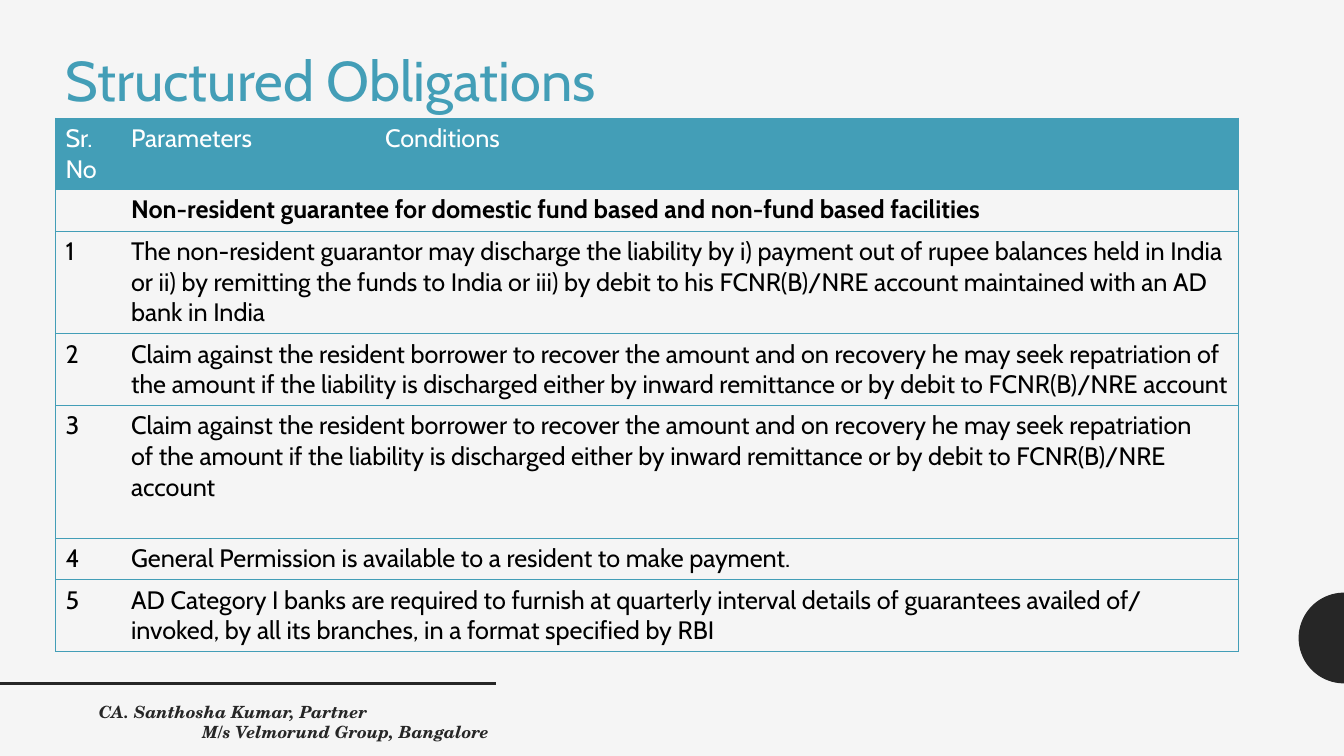
from math import cos, pi, sin

from lxml import etree
from pptx import Presentation
from pptx.dml.color import RGBColor
from pptx.enum.shapes import MSO_CONNECTOR
from pptx.enum.text import MSO_ANCHOR, MSO_AUTO_SIZE, PP_ALIGN
from pptx.oxml.ns import qn
from pptx.util import Inches, Pt

TEAL = RGBColor(0x43, 0x9E, 0xB7)
DARK = RGBColor(0x26, 0x26, 0x26)
PALE = RGBColor(0xF5, 0xF5, 0xF5)
BLACK = RGBColor(0, 0, 0)
WHITE = RGBColor(255, 255, 255)
LEFT, RIGHT = PP_ALIGN.LEFT, PP_ALIGN.RIGHT
TOP = MSO_ANCHOR.TOP
FIXED = MSO_AUTO_SIZE.NONE
STRAIGHT = MSO_CONNECTOR.STRAIGHT
SANS, SERIF = "Cabin", "TeX Gyre Schola"

CLAIM = (
    "Claim against the resident borrower to recover the amount and on recovery "
    "he may seek repatriation of the amount if the liability is discharged either "
    "by inward remittance or by debit to FCNR(B)/NRE account"
)
HEAD = ("Sr. No", "Parameters", "Conditions")
ROWS = [
    ("", "Non-resident guarantee for domestic fund based and non-fund based facilities"),
    ("1", "The non-resident guarantor may discharge the liability by i) payment out of "
          "rupee balances held in India or ii) by remitting the funds to India or iii) "
          "by debit to his FCNR(B)/NRE account maintained with an AD bank in India"),
    ("2", CLAIM),
    ("3", CLAIM),
    ("4", "General Permission is available to a resident to make payment."),
    ("5", "AD Category I banks are required to furnish at quarterly interval details of "
          "guarantees availed of/ invoked, by all its branches, in a format specified by RBI"),
]
WIDTHS = (0.65, 2.52, 8.56)
HEIGHTS = (0.71, 0.41, 1.02, 0.71, 1.32, 0.41, 0.71)


def add_run(para, text, size, color, face=SANS, bold=False, slant=False):
    run = para.add_run()
    run.text = text
    font = run.font
    font.size, font.name = Pt(size), face
    font.bold, font.italic = bold, slant
    font.color.rgb = color


def add_title(slide, x, y, w, h):
    title = slide.shapes.title
    title.left, title.top = Inches(x), Inches(y)
    title.width, title.height = Inches(w), Inches(h)
    frame = title.text_frame
    frame.auto_size = FIXED
    frame.vertical_anchor = TOP
    para = frame.paragraphs[0]
    para.alignment = LEFT
    add_run(para, "Structured Obligations", 40, TEAL)


def set_edges(cell, shown):
    props = cell._tc.get_or_add_tcPr()
    for side in "LRTB":
        line = etree.SubElement(props, qn("a:ln" + side), w=str(Pt(0.5)))
        if side in shown:
            fill = etree.SubElement(line, qn("a:solidFill"))
            etree.SubElement(fill, qn("a:srgbClr"), val=str(TEAL))
        else:
            etree.SubElement(line, qn("a:noFill"))


def add_grid(slide, x, y):
    frame = slide.shapes.add_table(
        len(HEIGHTS), len(WIDTHS), Inches(x), Inches(y),
        Inches(sum(WIDTHS)), Inches(sum(HEIGHTS)))
    table = frame.table
    table.first_row = table.horz_banding = False
    for col, width in zip(table.columns, WIDTHS):
        col.width = Inches(width)
    for row, height in zip(table.rows, HEIGHTS):
        row.height = Inches(height)
    for r, texts in enumerate([HEAD] + ROWS):
        for c in range(len(WIDTHS)):
            cell = table.cell(r, c)
            set_edges(cell, ("LTB", "TB", "RTB")[c])
            if r == 0:
                cell.fill.solid()
                cell.fill.fore_color.rgb = TEAL
            else:
                cell.fill.background()
        if r:
            table.cell(r, 1).merge(table.cell(r, 2))
            set_span = table.cell(r, 1)._tc.get_or_add_tcPr()
            for line in list(set_span.findall(qn("a:lnR"))):
                twin = table.cell(r, 2)._tc.tcPr.find(qn("a:lnR"))
                line.append(etree.fromstring(etree.tostring(twin[0])))
                line.remove(line[0])
        for c, text in enumerate(texts):
            para = table.cell(r, c).text_frame.paragraphs[0]
            if text:
                add_run(para, text, 18, BLACK if r else WHITE, bold=r == 1)
            else:
                para.font.size = Pt(18)
    table.cell(4, 1).margin_right = Inches(0.3)


def add_disc(slide, x, y, size):
    steps = 48
    dots = [
        (Inches(x - size * sin(pi * i / steps)), Inches(y - size * cos(pi * i / steps)))
        for i in range(steps + 1)
    ]
    form = slide.shapes.build_freeform(*dots[0])
    form.add_line_segments(dots[1:], close=True)
    disc = form.convert_to_shape()
    disc.shadow.inherit = False
    disc.fill.solid()
    disc.fill.fore_color.rgb = DARK
    disc.line.fill.background()


def add_foot(slide, x, y, w, h):
    rule_y = Inches(y - 0.13)
    rule = slide.shapes.add_connector(STRAIGHT, 0, rule_y, Inches(x + w - 0.08), rule_y)
    rule.line.color.rgb = DARK
    rule.line.width = Pt(2)
    etree.SubElement(rule._element.spPr, qn("a:effectLst"))
    box = slide.shapes.add_textbox(Inches(x), Inches(y), Inches(w), Inches(h))
    frame = box.text_frame
    frame.word_wrap = True
    frame.margin_left = frame.margin_right = Inches(0.15)
    first, last = frame.paragraphs[0], frame.add_paragraph()
    first.alignment, last.alignment = LEFT, RIGHT
    add_run(first, "CA. Santhosha Kumar, Partner", 12, DARK, SERIF, True, True)
    add_run(last, "M/s Velmorund Group, Bangalore", 12, DARK, SERIF, True, True)


def main():
    deck = Presentation()
    deck.slide_width, deck.slide_height = Inches(13.33), Inches(7.5)
    slide = deck.slides.add_slide(deck.slide_layouts[5])
    slide.background.fill.solid()
    slide.background.fill.fore_color.rgb = PALE
    add_disc(slide, 13.33, 6.33, 0.45)
    add_grid(slide, 0.55, 1.17)
    add_title(slide, 0.55, 0.4, 6.45, 0.77)
    add_foot(slide, 0.83, 6.91, 4.17, 0.4)
    deck.save("out.pptx")


if __name__ == "__main__":
    main()
